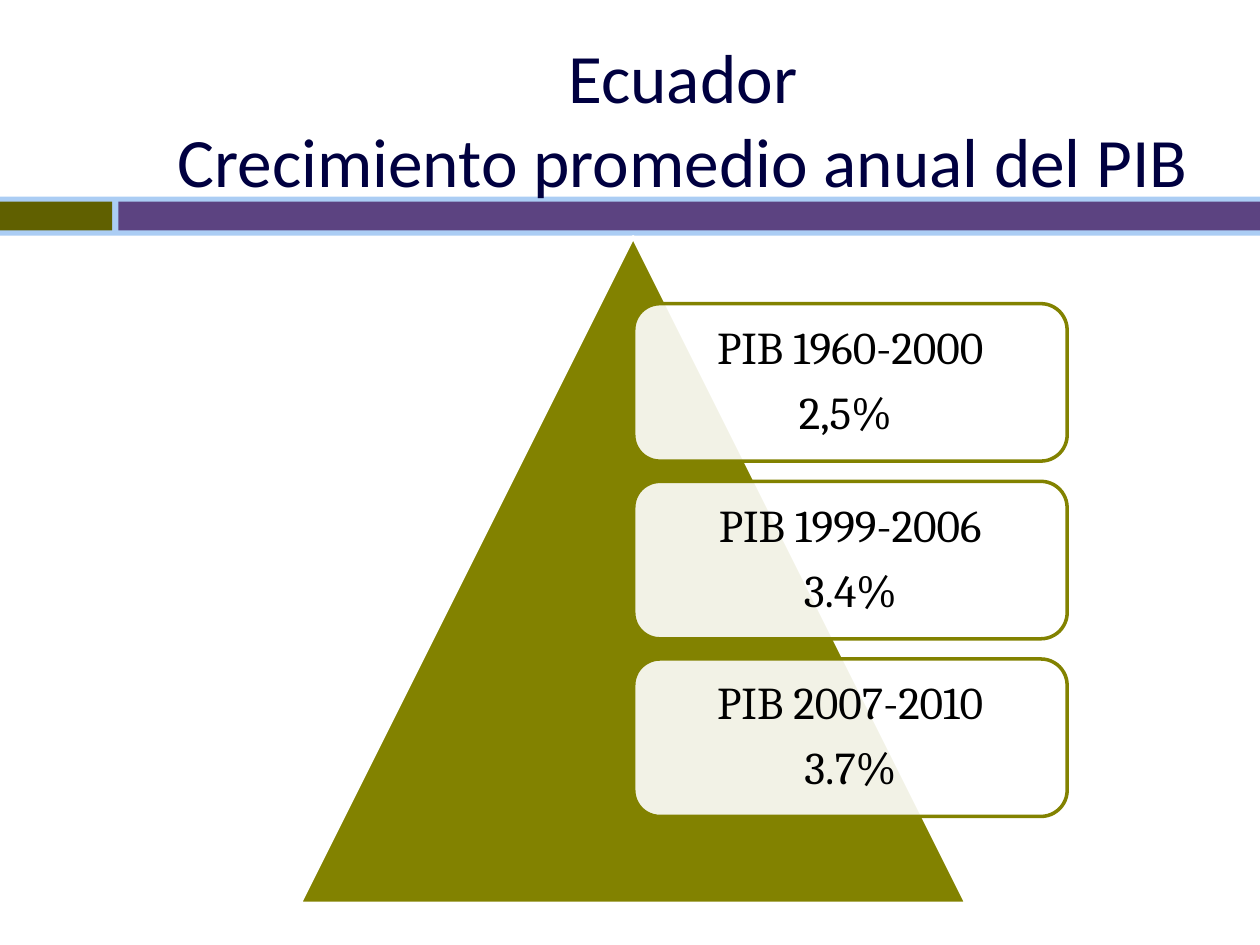
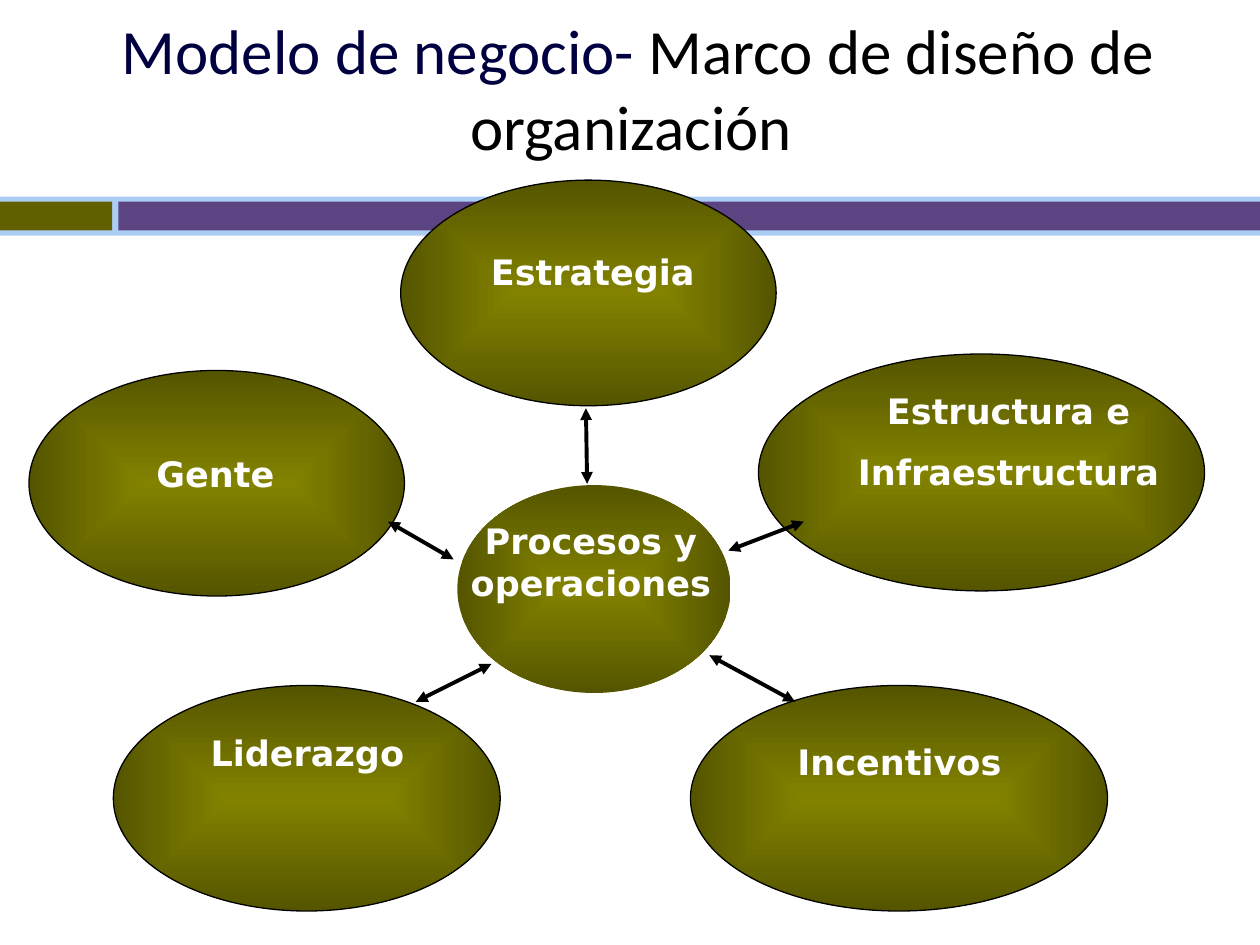
"""Builds two slides on Ecuador's GDP growth and an organisation design framework."""
from dataclasses import dataclass
from typing import NamedTuple

from lxml.etree import SubElement
from pptx import Presentation
from pptx.dml.color import RGBColor
from pptx.enum.shapes import MSO_CONNECTOR as Link, MSO_SHAPE as Preset
from pptx.enum.text import MSO_ANCHOR as Anchor, MSO_AUTO_SIZE as Fit, PP_ALIGN as Align
from pptx.oxml.ns import qn
from pptx.util import Emu, Inches, Pt

WIDTH, HEIGHT = Inches(10), Inches(7.5)
UNIT = WIDTH / 100

BLACK = RGBColor(0x00, 0x00, 0x00)
WHITE = RGBColor(0xFF, 0xFF, 0xFF)
NAVY = RGBColor(0x00, 0x00, 0x40)
SKY = RGBColor(0xAB, 0xCD, 0xF4)
MOSS = RGBColor(0x60, 0x60, 0x00)
PURPLE = RGBColor(0x5C, 0x43, 0x81)
OLIVE = RGBColor(0x82, 0x82, 0x00)
DARK_OLIVE = RGBColor(0x55, 0x55, 0x00)


class Frame(NamedTuple):
    """Left, top, width and height on a grid of 100 columns by 75 rows."""
    left: float
    top: float
    width: float
    height: float

    def lengths(self) -> list:
        return [cells(value) for value in self]


class Span(NamedTuple):
    """A piece of title text and its colour."""
    text: str
    color: RGBColor


class Arrow(NamedTuple):
    """A two-headed arrow between two grid points."""
    start_x: float
    start_y: float
    end_x: float
    end_y: float


@dataclass
class Node:
    """An ellipse of the framework with its label."""
    frame: Frame
    label_frame: Frame
    lines: list
    outlined: bool = True


BANDS = [
    (Frame(0, 15.6, 100, 3.1), SKY),
    (Frame(0, 16, 8.9, 2.3), MOSS),
    (Frame(9.4, 16, 90.6, 2.3), PURPLE),
]
GROWTH = [("PIB 1960-2000", "2,5% "), ("PIB 1999-2006", "3.4%"), ("PIB 2007-2010", "3.7%")]
CARD = Frame(50.3, 24.1, 34.4, 12.5)
CARD_STEP = 14.1
NODES = [
    Node(Frame(2.3, 29.4, 29.8, 17.9), Frame(7.5, 35.4, 19.2, 4.3), ["Gente"]),
    Node(Frame(9, 54.4, 30.7, 17.9), Frame(9, 57.6, 30.8, 4.3), ["Liderazgo"]),
    Node(Frame(54.8, 54.4, 33.1, 17.9), Frame(55.6, 58.3, 31.6, 4.3), ["Incentivos"]),
    Node(Frame(60.2, 28.1, 35.4, 18.8), Frame(66, 30.4, 28.1, 9.3),
         ["Estructura e", "Infraestructura"]),
    Node(Frame(31.8, 14.3, 29.8, 17.9), Frame(35.4, 19.4, 23.3, 4.3), ["Estrategia"]),
    Node(Frame(36.3, 38.5, 21.7, 16.5), Frame(34.3, 40.7, 25.2, 7.7),
         ["Procesos y operaciones"], outlined=False),
]
ARROWS = [
    Arrow(63.8, 41.4, 57.8, 43.7),
    Arrow(30.8, 41.4, 36, 44.4),
    Arrow(46.5, 32.4, 46.6, 38.4),
    Arrow(33, 55.7, 39, 52.7),
    Arrow(63.1, 55.7, 56.3, 52),
]
CARD_FONT = dict(name="Cambria", size=Pt(26))
LABEL_FONT = dict(name="DejaVu Sans", size=Pt(20), bold=True)
CARD_PARA = dict(alignment=Align.CENTER, line_spacing=0.9, space_after=Pt(9))
LABEL_PARA = dict(alignment=Align.CENTER, space_before=Pt(11))


def cells(count: float) -> Emu:
    """Turn grid cells into a length."""
    return Emu(round(count * UNIT))


def apply(target, values: dict) -> None:
    """Set each named value on the target."""
    for name, value in values.items():
        setattr(target, name, value)


def set_frame(frame, margins: tuple, anchor) -> None:
    """Set wrapping, anchor and the horizontal and vertical margins of a text frame."""
    across, down = map(Inches, margins)
    apply(frame, dict(word_wrap=True, auto_size=Fit.NONE, vertical_anchor=anchor,
                      margin_left=across, margin_right=across,
                      margin_top=down, margin_bottom=down))


def write_lines(frame, lines, para_format: dict, font: dict, color: RGBColor) -> None:
    """Write one paragraph per line in a shared format."""
    for index, line in enumerate(lines):
        para = frame.add_paragraph() if index else frame.paragraphs[0]
        apply(para, para_format)
        span = para.add_run()
        span.text = line
        apply(span.font, font)
        span.font.color.rgb = color


def add_figure(page, preset, frame: Frame, fill: RGBColor, line: RGBColor = None,
               weight: float = 0):
    """Add a flat preset shape."""
    shape = page.shapes.add_shape(preset, *frame.lengths())
    shape.shadow.inherit = False
    shape.fill.solid()
    shape.fill.fore_color.rgb = fill
    if line is None:
        shape.line.fill.background()
    else:
        shape.line.color.rgb = line
        shape.line.width = Pt(weight)
    return shape


def set_title(page, frame: Frame, spans: list, size: float, margins: tuple) -> None:
    """Place the title and write its spans, a vertical tab being a line break."""
    title = page.shapes.title
    apply(title, dict(zip(("left", "top", "width", "height"), frame.lengths())))
    set_frame(title.text_frame, margins, Anchor.MIDDLE)
    para = title.text_frame.paragraphs[0]
    para.alignment = Align.CENTER
    for text, color in spans:
        for index, part in enumerate(text.split("\v")):
            if index:
                para.add_line_break()
            span = para.add_run()
            span.text = part
            apply(span.font, dict(name="Calibri", size=Pt(size)))
            span.font.color.rgb = color


def add_bands(page, layout) -> None:
    """Draw the bands and hand them to the layout that all slides share."""
    for frame, color in BANDS:
        band = add_figure(page, Preset.RECTANGLE, frame, color)
        layout.shapes.element.append(band.element)


def add_card(page, row: int, lines: tuple) -> None:
    """Add a translucent card with a period and its growth."""
    frame = CARD._replace(top=CARD.top + row * CARD_STEP)
    card = add_figure(page, Preset.ROUNDED_RECTANGLE, frame, WHITE, OLIVE, 2)
    color = card.element.spPr.find(qn("a:solidFill"))[0]
    SubElement(color, qn("a:alpha"), val="90000")
    set_frame(card.text_frame, (0.11, 0.11), Anchor.MIDDLE)
    write_lines(card.text_frame, lines, CARD_PARA, CARD_FONT, BLACK)


def shade_from_centre(shape) -> None:
    """Fill a shape with olive that darkens towards the edges."""
    shape.fill.gradient()
    for stop, position, color in zip(shape.fill.gradient_stops, (0, 1), (OLIVE, DARK_OLIVE)):
        stop.position = position
        stop.color.rgb = color
    gradient = shape.element.spPr.find(qn("a:gradFill"))
    gradient.remove(gradient.find(qn("a:lin")))
    centre = SubElement(gradient, qn("a:path"), {"path": "shape"})
    SubElement(centre, qn("a:fillToRect"), dict.fromkeys("ltrb", "50000"))


def add_node(page, node: Node) -> None:
    """Add an ellipse and its label."""
    line = BLACK if node.outlined else None
    shade_from_centre(add_figure(page, Preset.OVAL, node.frame, OLIVE, line, 0.75))
    label = page.shapes.add_textbox(*node.label_frame.lengths())
    set_frame(label.text_frame, (0.1, 0.05), Anchor.TOP)
    write_lines(label.text_frame, node.lines, LABEL_PARA, LABEL_FONT, WHITE)


def add_arrow(page, arrow: Arrow) -> None:
    """Add a two-headed arrow."""
    link = page.shapes.add_connector(Link.STRAIGHT, *map(cells, arrow))
    link.line.color.rgb = BLACK
    link.line.width = Pt(2.25)
    outline = link.element.spPr.find(qn("a:ln"))
    for end in ("a:headEnd", "a:tailEnd"):
        SubElement(outline, qn(end), type="triangle")
    SubElement(link.element.spPr, qn("a:effectLst"))


def build_growth(page) -> None:
    """Build the slide on average GDP growth."""
    set_title(page, Frame(9.2, 3.1, 90, 12.5),
              [Span("Ecuador\vCrecimiento promedio anual del PIB", NAVY)], 39.6, (0, 0))
    add_figure(page, Preset.ISOSCELES_TRIANGLE, Frame(23.8, 18.8, 52.9, 52.9), OLIVE, WHITE, 2)
    for row, lines in enumerate(GROWTH):
        add_card(page, row, lines)


def build_framework(page) -> None:
    """Build the slide on the organisation design framework."""
    set_title(page, Frame(1.3, 0.7, 98.7, 12.5),
              [Span("Modelo de negocio-", NAVY),
               Span(" Marco de diseño de organización ", BLACK)], 36, (0.1, 0.05))
    for node in NODES:
        add_node(page, node)
    for arrow in ARROWS:
        add_arrow(page, arrow)


def main() -> None:
    """Build and save the deck."""
    deck = Presentation()
    deck.slide_width, deck.slide_height = WIDTH, HEIGHT
    layout = deck.slide_layouts.get_by_name("Title Only")
    growth, framework = (deck.slides.add_slide(layout) for _ in range(2))
    add_bands(growth, layout)
    build_growth(growth)
    build_framework(framework)
    deck.save("out.pptx")


if __name__ == "__main__":
    main()
